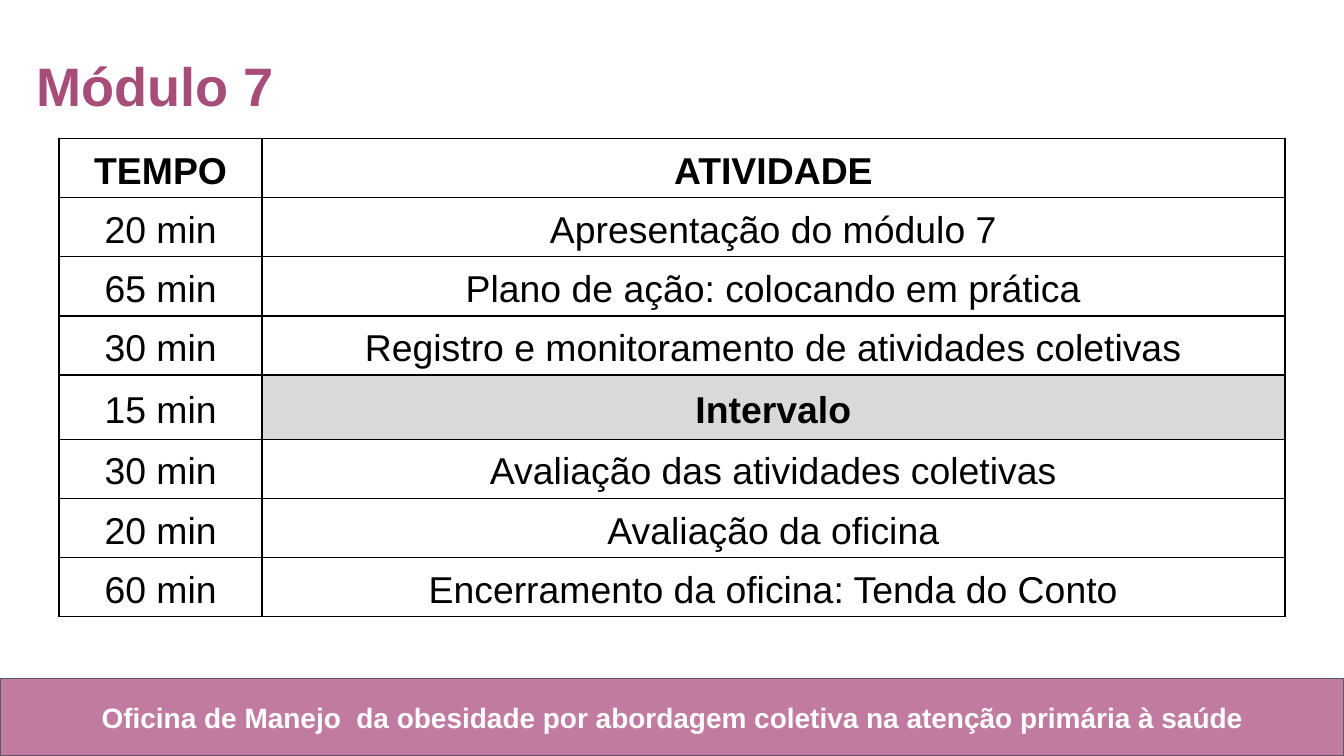
import pptx
import pptx.util
import pptx.dml.color
import pptx.enum.shapes
import pptx.enum.text
import pptx.oxml
import pptx.oxml.ns
import lxml.etree

Inches = pptx.util.Inches
Pt = pptx.util.Pt
ALIGN = pptx.enum.text.PP_ALIGN
ANCHOR = pptx.enum.text.MSO_ANCHOR

# 16:9 slide
SLIDE_WIDTH = Inches(10)
SLIDE_HEIGHT = Inches(10 * 9 / 16)

BLACK, WHITE, GREY = "000000", "FFFFFF", "D9D9D9"
PLUM, PINK, OUTLINE = "A64D79", "C27BA0", "595959"

COLUMN_WIDTHS = (1.51, 7.61)
ROW_HEIGHT, BREAK_HEIGHT = 0.44, 0.48
BREAK_NAME = "Intervalo"
SCHEDULE = [
    ("TEMPO", "ATIVIDADE"),
    ("20 min", "Apresentação do módulo 7"),
    ("65 min", "Plano de ação: colocando em prática"),
    ("30 min", "Registro e monitoramento de atividades coletivas"),
    ("15 min", BREAK_NAME),
    ("30 min", "Avaliação das atividades coletivas"),
    ("20 min", "Avaliação da oficina"),
    ("60 min", "Encerramento da oficina: Tenda do Conto"),
]


def rgb(value):
    return pptx.dml.color.RGBColor.from_string(value)


def write_text(tf, text, size=20, color=BLACK, bold=False,
               align=ALIGN.CENTER, spacing=1.0):
    p = tf.paragraphs[0]
    p.alignment = align
    p.line_spacing = spacing
    r = p.add_run()
    r.text = text
    r.font.name = "Arial"
    r.font.size = Pt(size)
    r.font.bold = bold
    r.font.color.rgb = rgb(color)


def set_frame(tf):
    tf.word_wrap = True
    tf.auto_size = pptx.enum.text.MSO_AUTO_SIZE.NONE
    tf.vertical_anchor = ANCHOR.TOP
    tf.margin_left = tf.margin_right = Inches(0.1)
    tf.margin_top = tf.margin_bottom = Inches(0.1)


def add_footer(s, text):
    top = Inches(5.05)
    sp = s.shapes.add_shape(pptx.enum.shapes.MSO_SHAPE.RECTANGLE,
                            0, top, SLIDE_WIDTH, SLIDE_HEIGHT - top)
    sp.shadow.inherit = False
    sp.fill.solid()
    sp.fill.fore_color.rgb = rgb(PINK)
    sp.line.color.rgb = rgb(OUTLINE)
    sp.line.width = Pt(0.75)

    box = s.shapes.add_textbox(Inches(0.34), Inches(5.11),
                               Inches(9.33), Inches(0.45))
    set_frame(box.text_frame)
    write_text(box.text_frame, text, size=15, color=WHITE, bold=True)


def set_title(s, text):
    title = s.shapes.title
    title.left, title.top = Inches(0.17), Inches(0.22)
    title.width, title.height = Inches(7.57), Inches(0.74)
    set_frame(title.text_frame)
    write_text(title.text_frame, text, size=29, color=PLUM, bold=True,
               align=ALIGN.LEFT, spacing=1.15)


def set_borders(cell, color=BLACK, width=1):
    # Border elements must come before the cell's fill
    tc_pr = cell._tc.get_or_add_tcPr()
    qn = pptx.oxml.ns.qn
    for i, side in enumerate(("a:lnL", "a:lnR", "a:lnT", "a:lnB")):
        ln = lxml.etree.Element(qn(side), w=str(Pt(width)))
        fill = lxml.etree.SubElement(ln, qn("a:solidFill"))
        lxml.etree.SubElement(fill, qn("a:srgbClr"), val=color)
        tc_pr.insert(i, ln)


def format_cell(cell, text, fill, bold):
    cell.vertical_anchor = ANCHOR.MIDDLE
    cell.margin_left = cell.margin_right = Inches(0.03)
    cell.margin_top = cell.margin_bottom = Inches(0.03)
    cell.fill.solid()
    cell.fill.fore_color.rgb = rgb(fill)
    set_borders(cell)
    write_text(cell.text_frame, text, bold=bold, spacing=1.15)


def add_schedule(s, rows):
    heights = [BREAK_HEIGHT if activity == BREAK_NAME else ROW_HEIGHT
               for _, activity in rows]
    table = s.shapes.add_table(len(rows), len(COLUMN_WIDTHS),
                               Inches(0.44), Inches(1.03),
                               Inches(sum(COLUMN_WIDTHS)),
                               Inches(sum(heights))).table
    for column, width in zip(table.columns, COLUMN_WIDTHS):
        column.width = Inches(width)
    for i, (row, height) in enumerate(zip(rows, heights)):
        table.rows[i].height = Inches(height)
        for j, text in enumerate(row):
            is_break = text == BREAK_NAME
            format_cell(table.cell(i, j), text,
                        fill=GREY if is_break else WHITE,
                        bold=i == 0 or is_break)


def main():
    prs = pptx.Presentation()
    prs.slide_width, prs.slide_height = SLIDE_WIDTH, SLIDE_HEIGHT
    s = prs.slides.add_slide(prs.slide_layouts[5])  # title only

    add_footer(s, "Oficina de Manejo  da obesidade por abordagem coletiva "
                  "na atenção primária à saúde")
    set_title(s, "Módulo 7")
    add_schedule(s, SCHEDULE)

    prs.save("out.pptx")


if __name__ == "__main__":
    main()
